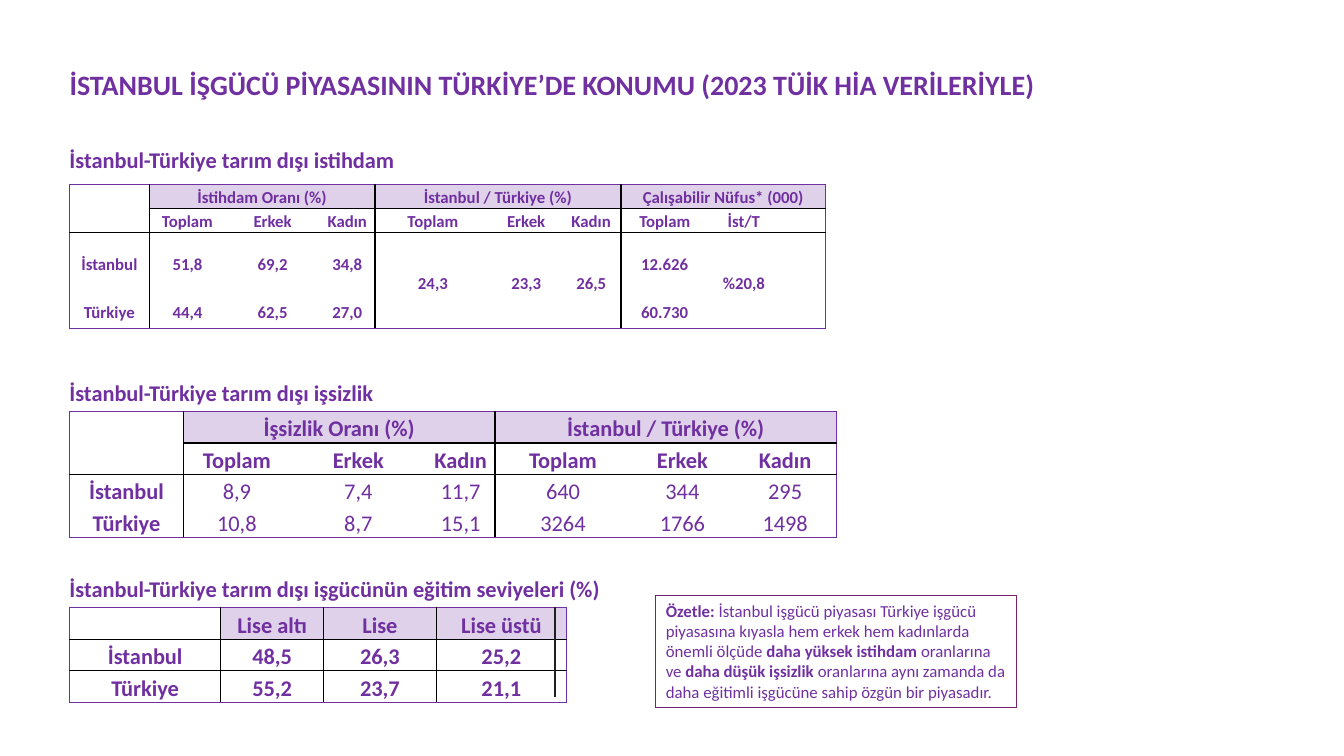
"""Build the slide on Istanbul's place in the Turkish labour market."""
import lxml.etree
import pptx
import pptx.dml.color
import pptx.enum.shapes
import pptx.enum.text
import pptx.oxml.ns
import pptx.util

Pt = pptx.util.Pt
qn = pptx.oxml.ns.qn
MIDDLE = pptx.enum.text.MSO_ANCHOR.MIDDLE
LEFT = pptx.enum.text.PP_ALIGN.LEFT
CENTER = pptx.enum.text.PP_ALIGN.CENTER
PURPLE, BLACK = "7030A0", "000000"


def color(hex_code):
    return pptx.dml.color.RGBColor.from_string(hex_code)


def style(p, size, bold, align=LEFT):
    p.alignment = align
    p.font.name = "Calibri"
    p.font.size = Pt(size)
    p.font.bold = bold
    p.font.color.rgb = color(PURPLE)


prs = pptx.Presentation()
prs.slide_width, prs.slide_height = Pt(960), Pt(540)
s = prs.slides.add_slide(prs.slide_layouts[5])

title = s.shapes.title
title.left, title.top, title.width, title.height = Pt(42.5), Pt(33), Pt(828), Pt(57.6)
tf = title.text_frame
tf.text = "İSTANBUL İŞGÜCÜ PİYASASININ TÜRKİYE’DE KONUMU (2023 TÜİK HİA VERİLERİYLE)"
tf.auto_size = pptx.enum.text.MSO_AUTO_SIZE.NONE
tf.vertical_anchor = MIDDLE
tf.paragraphs[0].line_spacing = 0.9
style(tf.paragraphs[0], 20, True)

GENDERS = ["Toplam", "Erkek", "Kadın"]
RATIO = "İstanbul / Türkiye (%)"
tables = [
    dict(top=131.6, size=12, after=10, bold_values=True, groups=[1, 4, 7], lines=[1, 2],
         widths=[56.9, 54.7, 67, 39.6, 82.8, 50.4, 42.5, 62.6, 50.4, 33.1],
         heights=[17.1, 17.1, 45, 23.6], lowered=[(2, 4), (2, 5), (2, 6), (2, 8)],
         rows=[["", "İstihdam Oranı (%)", "", "", RATIO, "", "", "Çalışabilir Nüfus* (000)", "", ""],
               ["", *GENDERS, *GENDERS, "Toplam", "İst/T", ""],
               ["İstanbul", "51,8", "69,2", "34,8", "24,3", "23,3", "26,5", "12.626", "%20,8", ""],
               ["Türkiye", "44,4", "62,5", "27,0", "", "", "", "60.730", "", ""]]),
    dict(top=293.9, size=16, after=10, bold_values=False, groups=[1, 4], lines=[1, 2],
         widths=[81.4, 76.3, 97.2, 49, 97.2, 73.4, 73.4], heights=[22.5] * 4, lowered=[],
         rows=[["", "İşsizlik Oranı (%)", "", "", RATIO, "", ""],
               ["", *GENDERS, *GENDERS],
               ["İstanbul", "8,9", "7,4", "11,7", "640", "344", "295"],
               ["Türkiye", "10,8", "8,7", "15,1", "3264", "1766", "1498"]]),
    dict(top=434, size=16, after=8, bold_values=True, groups=[1, 2, 3], lines=[1, 2],
         widths=[108, 73.4, 80.6, 92.9], heights=[22.5] * 3, lowered=[],
         rows=[["", "Lise altı", "Lise", "Lise üstü"],
               ["İstanbul", "48,5", "26,3", "25,2"],
               ["Türkiye", "55,2", "23,7", "21,1"]]),
]

for t in tables:
    n_rows, n_cols = len(t["rows"]), len(t["widths"])
    frame = s.shapes.add_table(n_rows, n_cols, Pt(49.7), Pt(t["top"]),
                               Pt(sum(t["widths"])), Pt(sum(t["heights"])))
    table = frame.table
    table.first_row = table.horz_banding = False
    for column, width in zip(table.columns, t["widths"]):
        column.width = Pt(width)
    for row, height in zip(table.rows, t["heights"]):
        row.height = Pt(height)
    span = 1 if n_cols == 4 else 3
    if span > 1:
        for g in t["groups"]:
            table.cell(0, g).merge(table.cell(0, g + span - 1))

    for i, texts in enumerate(t["rows"]):
        for j, text in enumerate(texts):
            cell = table.cell(i, j)
            cell.vertical_anchor = MIDDLE
            cell.margin_left = cell.margin_right = Pt(5)
            cell.margin_top = Pt(26.8 if (i, j) in t["lowered"] else 0)
            cell.margin_bottom = 0
            p = cell.text_frame.paragraphs[0]
            p.text = text
            p.line_spacing = 1.15
            p.space_after = Pt(t["after"])
            is_value = j > 0 and i >= n_rows - 2
            style(p, t["size"], t["bold_values"] or not is_value, CENTER)
            if not text:
                lxml.etree.SubElement(p._p, qn("a:endParaRPr"), sz=str(t["size"] * 100))

            right = j + (span if i == 0 and j in t["groups"] else 1)
            open_corner = span > 1 and j == 0
            edges = {
                "L": PURPLE if j == 0 else BLACK if j in t["groups"] else None,
                "R": PURPLE if right == n_cols else BLACK if right in t["groups"] else None,
                "T": PURPLE if i == 0 else
                     BLACK if i in t["lines"] and not (open_corner and i == 1) else None,
                "B": PURPLE if i == n_rows - 1 else
                     BLACK if i + 1 in t["lines"] and not (open_corner and i == 0) else None,
            }
            tcPr = cell._tc.get_or_add_tcPr()
            for side, edge in edges.items():
                ln = lxml.etree.SubElement(tcPr, qn("a:ln" + side), w=str(Pt(1)))
                if edge:
                    fill = lxml.etree.SubElement(ln, qn("a:solidFill"))
                    lxml.etree.SubElement(fill, qn("a:srgbClr"), val=edge)
                else:
                    lxml.etree.SubElement(ln, qn("a:noFill"))

            if i == 0 and j > 0:
                cell.fill.solid()
                cell.fill.fore_color.rgb = color(PURPLE)
                clr = tcPr.find(qn("a:solidFill")).find(qn("a:srgbClr"))
                lxml.etree.SubElement(clr, qn("a:alpha"), val="22000")
            else:
                cell.fill.background()

for top, width, heading in [
    (100.8, 613.4, "İstanbul-Türkiye tarım dışı istihdam"),
    (267.1, 417.6, "İstanbul-Türkiye tarım dışı işsizlik"),
    (407.5, 473.8, "İstanbul-Türkiye tarım dışı işgücünün eğitim seviyeleri (%)"),
]:
    tf = s.shapes.add_textbox(Pt(42.5), Pt(top), Pt(width), Pt(26.6)).text_frame
    tf.word_wrap = True
    tf.auto_size = pptx.enum.text.MSO_AUTO_SIZE.SHAPE_TO_FIT_TEXT
    tf.text = heading
    style(tf.paragraphs[0], 16, True)

sp = s.shapes.add_shape(pptx.enum.shapes.MSO_SHAPE.RECTANGLE, Pt(468.5), Pt(425.5), Pt(257.3), Pt(80))
sp.shadow.inherit = False
sp.fill.background()
sp.line.color.rgb = color("78206E")
sp.line.width = Pt(0.75)
tf = sp.text_frame
tf.word_wrap = True
tf.vertical_anchor = pptx.enum.text.MSO_ANCHOR.TOP
p = tf.paragraphs[0]
style(p, 12, False)
for text, bold in [
    ("Özetle: ", True),
    ("İstanbul işgücü piyasası Türkiye işgücü piyasasına kıyasla hem erkek hem "
     "kadınlarda önemli ölçüde ", False),
    ("daha yüksek istihdam ", True),
    ("oranlarına ve ", False),
    ("daha düşük işsizlik ", True),
    ("oranlarına aynı zamanda da daha eğitimli işgücüne sahip özgün bir piyasadır.", False),
]:
    r = p.add_run()
    r.text = text
    r.font.bold = bold
    r.font.color.rgb = color(PURPLE)

line = s.shapes.add_connector(pptx.enum.shapes.MSO_CONNECTOR.STRAIGHT,
                              Pt(396.7), Pt(433.4), Pt(396.7), Pt(498.2))
line.line.color.rgb = color("202020")
line.line.width = Pt(1.5)
lxml.etree.SubElement(line._element.spPr, qn("a:effectLst"))

prs.save("out.pptx")
